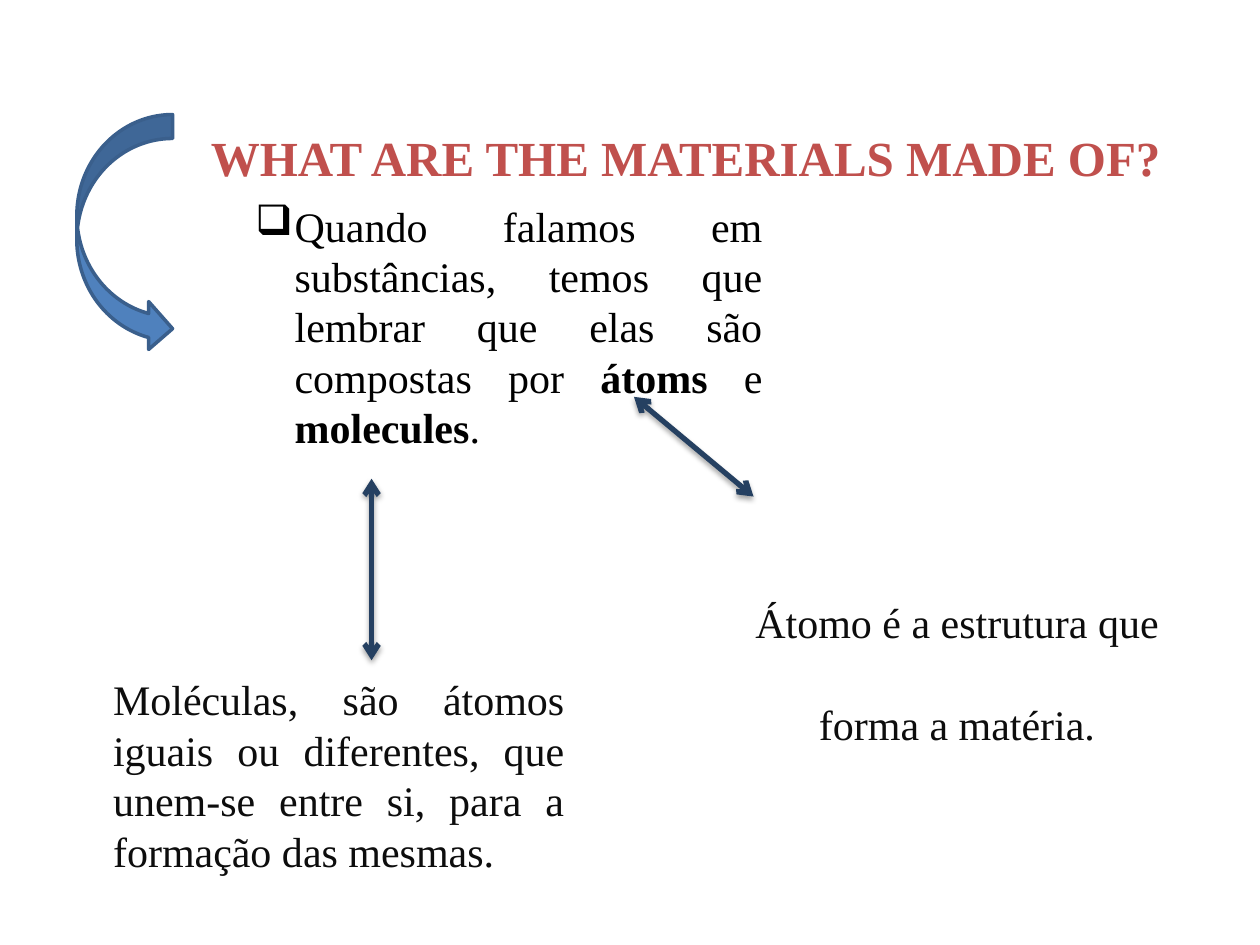
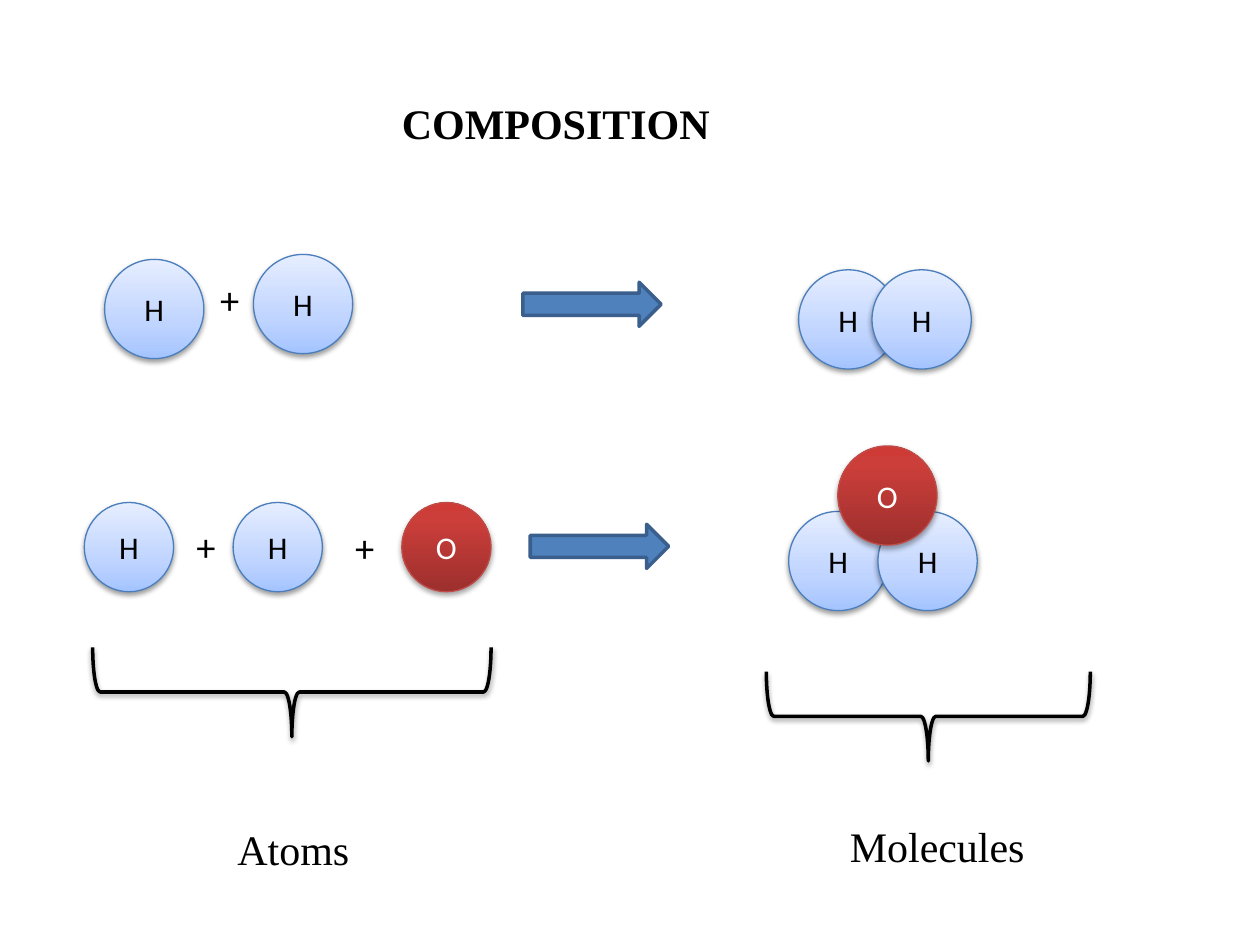
from copy import deepcopy
from dataclasses import dataclass

from lxml import etree
from pptx import Presentation
from pptx.dml.color import RGBColor
from pptx.enum.shapes import MSO_CONNECTOR, MSO_SHAPE
from pptx.enum.text import MSO_ANCHOR, MSO_AUTO_SIZE, PP_ALIGN
from pptx.oxml.ns import qn
from pptx.util import Cm, Pt

LEFT, CENTER, JUSTIFY = PP_ALIGN.LEFT, PP_ALIGN.CENTER, PP_ALIGN.JUSTIFY
TOP, MIDDLE, BOTTOM = MSO_ANCHOR.TOP, MSO_ANCHOR.MIDDLE, MSO_ANCHOR.BOTTOM
NO_AUTOFIT = MSO_AUTO_SIZE.NONE
OVAL, LEFT_BRACE = MSO_SHAPE.OVAL, MSO_SHAPE.LEFT_BRACE
RIGHT_ARROW, CURVED_ARROW = MSO_SHAPE.RIGHT_ARROW, MSO_SHAPE.CURVED_RIGHT_ARROW
STRAIGHT = MSO_CONNECTOR.STRAIGHT
TITLE_ONLY = 5


@dataclass(frozen=True)
class Theme:
    """Colours, fonts and type sizes shared by the slides."""
    serif: str = "Times New Roman"
    sans: str = "Calibri"
    black: str = "000000"
    soft_black: str = "0D0D0D"
    heading: str = "C0504D"
    arrow_fill: str = "4F81BD"
    arrow_line: str = "3A5F8C"
    connector: str = "254061"
    heading_size: int = 28
    body_size: int = 24
    plus_size: int = 22
    atom_size: int = 18


@dataclass(frozen=True)
class Element:
    """Look of one chemical element: gradient stops, outline, text and shadow."""
    stops: tuple
    line: str
    text: str
    shadow: tuple


THEME = Theme()
SOFT_SHADOW = (38, 1.6)
DEEP_SHADOW = (35, 1.8)
ELEMENTS = {
    "H": Element(((0, "A4C4FF"), (0.35, "BFD4FF"), (1, "E6EEFF")),
                 "4B7EBC", THEME.black, SOFT_SHADOW),
    "O": Element(((0, "9C2F2D"), (0.8, "CB3E3A"), (1, "CE3B37")),
                 "BF4C48", "FFFFFF", DEEP_SHADOW),
}


def rgb(value):
    """Turn a hex string into a colour."""
    return RGBColor.from_string(value)


def lengths(*values):
    """Turn centimetres into lengths."""
    return [Cm(value) for value in values]


def style_paragraph(paragraph, size, color, font=THEME.serif, align=CENTER):
    """Set the alignment and the font of a paragraph."""
    paragraph.alignment = align
    paragraph.font.name = font
    paragraph.font.size = Pt(size)
    paragraph.font.color.rgb = rgb(color)


def set_line(shape, color, width):
    """Give a shape or connector a solid line."""
    shape.line.color.rgb = rgb(color)
    shape.line.width = Pt(width)


def add_shadow(shape, opacity, distance):
    """Add a soft black shadow falling straight down."""
    effects = etree.SubElement(shape._element.spPr, qn("a:effectLst"))
    shadow = etree.SubElement(effects, qn("a:outerShdw"), blurRad=str(Pt(3.1)),
                              dist=str(Pt(distance)), dir="5400000", rotWithShape="0")
    color = etree.SubElement(shadow, qn("a:srgbClr"), val=THEME.black)
    etree.SubElement(color, qn("a:alpha"), val=str(opacity * 1000))


def add_title_slide(presentation, title, box, size, color, anchor):
    """Add a title-only slide with its title placed and formatted."""
    slide = presentation.slides.add_slide(presentation.slide_layouts[TITLE_ONLY])
    shape = slide.shapes.title
    shape.left, shape.top, shape.width, shape.height = lengths(*box)
    frame = shape.text_frame
    frame.text = title
    frame.auto_size = NO_AUTOFIT
    frame.vertical_anchor = anchor
    style_paragraph(frame.paragraphs[0], size, color)
    frame.paragraphs[0].font.bold = True
    return slide


def add_text(slide, box, runs, size=THEME.body_size, color=THEME.black,
             font=THEME.serif, align=CENTER, anchor=TOP, bullet=None):
    """Add a text box of (text, bold) runs and return its paragraph."""
    frame = slide.shapes.add_textbox(*lengths(*box)).text_frame
    frame.word_wrap = True
    frame.vertical_anchor = anchor
    paragraph = frame.paragraphs[0]
    if bullet:
        properties = paragraph._p.get_or_add_pPr()
        properties.set("marL", str(Cm(0.79)))
        properties.set("indent", str(-Cm(0.79)))
        etree.SubElement(properties, qn("a:buChar"), char=bullet)
    for text, bold in runs:
        run = paragraph.add_run()
        run.text = text
        if bold:
            run.font.bold = True
    style_paragraph(paragraph, size, color, font, align)
    return paragraph


def add_block_arrow(slide, kind, box):
    """Add a solid blue block arrow."""
    shape = slide.shapes.add_shape(kind, *lengths(*box))
    shape.shadow.inherit = False
    shape.fill.solid()
    shape.fill.fore_color.rgb = rgb(THEME.arrow_fill)
    set_line(shape, THEME.arrow_line, 2)


def add_double_arrow(slide, start, end):
    """Add a straight connector with an arrowhead at both ends."""
    connector = slide.shapes.add_connector(STRAIGHT, *lengths(*start, *end))
    set_line(connector, THEME.connector, 3)
    line = connector.line._get_or_add_ln()
    for tag in ("a:headEnd", "a:tailEnd"):
        etree.SubElement(line, qn(tag), type="arrow")
    add_shadow(connector, *DEEP_SHADOW)


def add_atom(slide, symbol, left, top, diameter):
    """Add a shaded ball carrying the symbol of its element."""
    element = ELEMENTS[symbol]
    shape = slide.shapes.add_shape(OVAL, *lengths(left, top, diameter, diameter))
    shape.fill.gradient()
    shape.fill.gradient_angle = 90
    stop_list = shape._element.spPr.find(qn("a:gradFill")).find(qn("a:gsLst"))
    stop_list.append(deepcopy(stop_list[0]))
    for stop, (position, color) in zip(shape.fill.gradient_stops, element.stops):
        stop.position = position
        stop.color.rgb = rgb(color)
    set_line(shape, element.line, 0.75)
    add_shadow(shape, *element.shadow)
    frame = shape.text_frame
    frame.text = symbol
    frame.vertical_anchor = MIDDLE
    style_paragraph(frame.paragraphs[0], THEME.atom_size, element.text, THEME.sans)


def add_plus(slide, left, top):
    """Add a plus sign between two atoms."""
    add_text(slide, (left, top, 1.4, 1.19), [("+", False)],
             THEME.plus_size, font=THEME.sans, align=LEFT)


def add_brace(slide, left, top, span):
    """Add a brace that opens upwards over the given span."""
    depth = 1.8
    box = (left + (span - depth) / 2, top + (depth - span) / 2, depth, span)
    shape = slide.shapes.add_shape(LEFT_BRACE, *lengths(*box))
    shape.rotation = 270
    shape.fill.background()
    set_line(shape, THEME.black, 2)
    add_shadow(shape, *SOFT_SHADOW)


def build_materials(presentation):
    """Build the slide that explains atoms and molecules."""
    slide = add_title_slide(presentation, "WHAT ARE THE MATERIALS MADE OF?",
                            (3.05, 1.96, 21.54, 2.39), THEME.heading_size,
                            THEME.heading, MIDDLE)
    add_block_arrow(slide, CURVED_ARROW, (1.55, 2.31, 1.93, 4.8))
    add_text(slide, (4.9, 3.91, 10.72, 6.4), [
        ("Quando falamos em substâncias, temos que lembrar que elas são compostas por ", False),
        ("átoms", True), (" e ", False), ("molecules", True), (".", False),
    ], align=JUSTIFY, bullet="❑")
    add_double_arrow(slide, (7.49, 13.31), (7.49, 9.65))
    add_double_arrow(slide, (15.19, 10.01), (12.78, 8))
    atom_text = add_text(slide, (14, 11.51, 10.59, 3.71),
                         [("Átomo é a estrutura que forma a matéria.", False)],
                         color=THEME.soft_black, anchor=BOTTOM)
    atom_text.line_spacing = Pt(58)
    add_text(slide, (2.03, 13.46, 9.6, 4.55), [
        ("Moléculas, são átomos iguais ou diferentes, que unem-se entre si, "
         "para a formação das mesmas.", False),
    ], color=THEME.soft_black, align=JUSTIFY)


def build_composition(presentation):
    """Build the slide that shows atoms joining into molecules."""
    slide = add_title_slide(presentation, "COMPOSITION", (3.1, 0.79, 16.21, 2.31),
                            THEME.body_size, THEME.black, BOTTOM)
    for left, top in ((4.19, 5.44), (3.71, 10.41), (6.91, 10.44)):
        add_plus(slide, left, top)
    for left, top in ((10.54, 5.69), (10.69, 10.57)):
        add_block_arrow(slide, RIGHT_ARROW, (left, top, 2.79, 0.89))

    hydrogen_atoms = (("H", 2.11, 5.23, 2), ("H", 5.11, 5.13, 2))
    hydrogen_molecule = (("H", 16.1, 5.44, 2), ("H", 17.58, 5.44, 2))
    water_atoms = (("H", 1.7, 10.13, 1.8), ("H", 4.7, 10.13, 1.8), ("O", 8.1, 10.13, 1.8))
    water_molecule = (("H", 15.9, 10.31, 2), ("H", 17.7, 10.31, 2), ("O", 16.89, 8.99, 2))
    for atom in hydrogen_atoms + hydrogen_molecule + water_atoms + water_molecule:
        add_atom(slide, *atom)

    add_brace(slide, 1.87, 13.05, 8.03)
    add_text(slide, (3.02, 16.48, 5.79, 1.27), [("Atoms", False)])
    add_brace(slide, 15.45, 13.54, 6.53)
    add_text(slide, (15.62, 16.41, 6.55, 1.27), [("Molecules", False)])


def main():
    """Build and save the presentation."""
    presentation = Presentation()
    presentation.slide_width, presentation.slide_height = lengths(25.4, 19.05)
    build_materials(presentation)
    build_composition(presentation)
    presentation.save("out.pptx")


if __name__ == "__main__":
    main()
